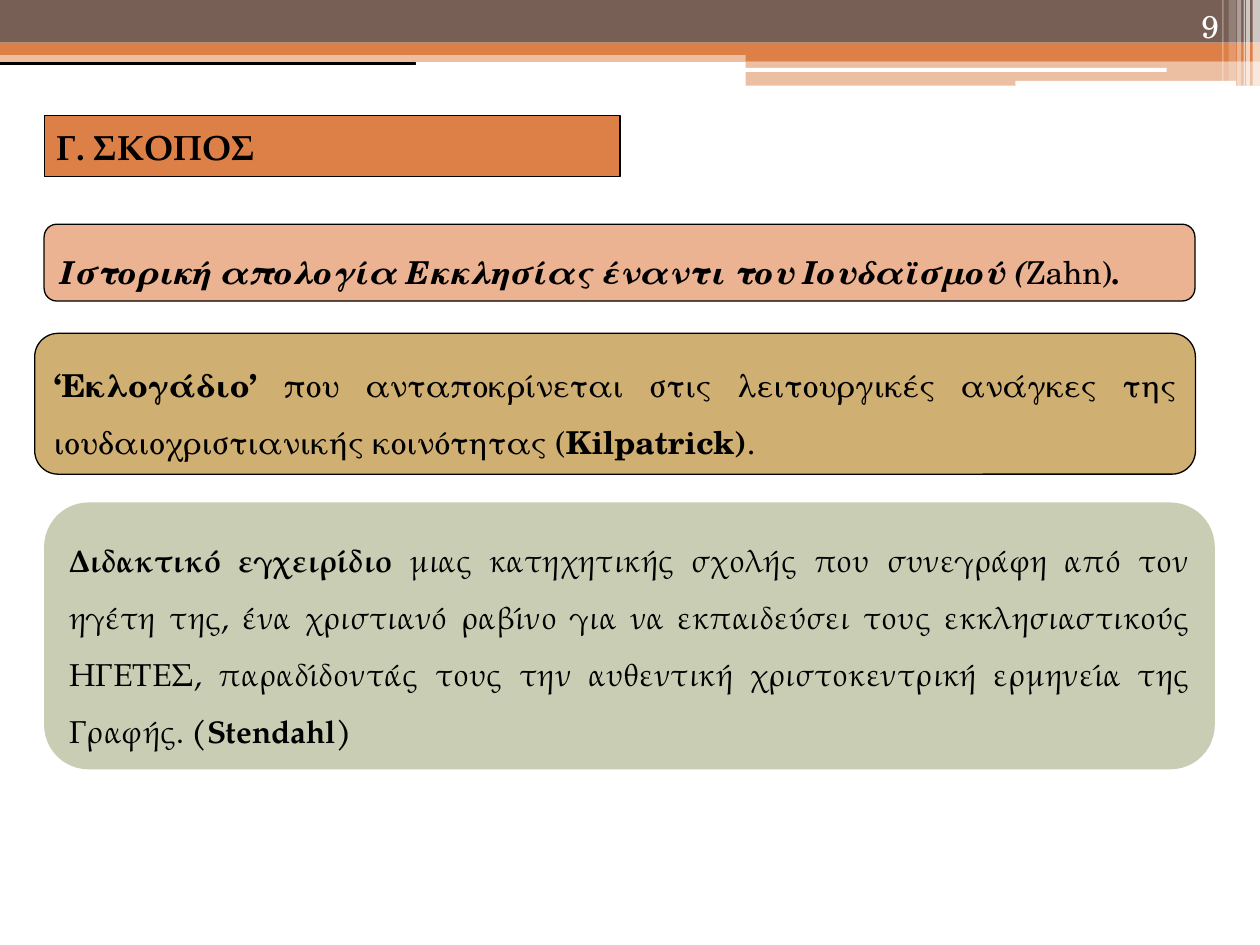
from dataclasses import dataclass
from pptx import Presentation
from pptx.dml.color import RGBColor
from pptx.enum.shapes import MSO_SHAPE
from pptx.enum.text import MSO_ANCHOR, MSO_AUTO_SIZE, PP_ALIGN
from pptx.oxml import parse_xml
from pptx.oxml.ns import nsdecls, qn
from pptx.util import Cm, Pt


@dataclass(frozen=True)
class Theme:
    brown: str = "775F55"
    orange: str = "DD8047"
    peach: str = "EBB391"
    sand: str = "D0AF72"
    sage: str = "C9CDB3"
    white: str = "FFFFFF"
    black: str = "000000"
    title_font: str = "TeX Gyre Pagella"
    text_font: str = "TeX Gyre Schola"
    title_size: int = 20
    text_size: int = 18
    outline: float = 0.75


def apply(target, values):
    for name, value in values.items():
        setattr(target, name, value)


class SlideBuilder:
    def __init__(self, slide, theme):
        self.slide = slide
        self.theme = theme

    def paint(self, shape, color, outlined=False):
        shape.fill.solid()
        shape.fill.fore_color.rgb = RGBColor.from_string(color)
        if outlined:
            shape.line.color.rgb = RGBColor.from_string(self.theme.black)
            shape.line.width = Pt(self.theme.outline)
        else:
            shape.line.fill.background()

    def set_text(self, shape, runs, font, size, color, alignment=PP_ALIGN.LEFT,
                 spacing=1.0, anchor=MSO_ANCHOR.MIDDLE):
        frame = shape.text_frame
        apply(frame, {"word_wrap": True, "auto_size": MSO_AUTO_SIZE.NONE,
                      "vertical_anchor": anchor})
        paragraph = frame.paragraphs[0]
        apply(paragraph, {"alignment": alignment, "line_spacing": spacing})
        for text, bold, italic in runs:
            run = paragraph.add_run()
            run.text = text
            apply(run.font, {"name": font, "size": Pt(size),
                             "bold": bold, "italic": italic})
            run.font.color.rgb = RGBColor.from_string(color)

    def bar(self, box, color, opacity=100, kind=MSO_SHAPE.RECTANGLE, outlined=False):
        shape = self.slide.shapes.add_shape(kind, *map(Cm, box))
        shape.shadow.inherit = False
        self.paint(shape, color, outlined)
        if opacity < 100:
            fill_color = shape._element.spPr.find(qn("a:solidFill"))[0]
            fill_color.append(parse_xml(
                f'<a:alpha {nsdecls("a")} val="{opacity * 1000}"/>'))
        return shape

    def title(self, box, text):
        title = self.slide.shapes.title
        apply(title, dict(zip(("left", "top", "width", "height"), map(Cm, box))))
        title._element.spPr.insert(1, parse_xml(
            f'<a:prstGeom {nsdecls("a")} prst="roundRect"><a:avLst/></a:prstGeom>'))
        self.paint(title, self.theme.orange, True)
        self.set_text(title, [(text, True, False)], self.theme.title_font,
                      self.theme.title_size, self.theme.black)

    def panel(self, box, color, runs, font, alignment, outlined=True):
        shape = self.bar(box, color, kind=MSO_SHAPE.ROUNDED_RECTANGLE, outlined=outlined)
        self.set_text(shape, runs, font, self.theme.text_size, self.theme.black,
                      alignment, 1.5)

    def slide_number(self, box, text):
        shape = self.slide.shapes.add_textbox(*map(Cm, box))
        self.set_text(shape, [(text, False, False)], self.theme.text_font,
                      self.theme.text_size, self.theme.white, PP_ALIGN.RIGHT,
                      anchor=MSO_ANCHOR.BOTTOM)


def add_banner(builder):
    theme = builder.theme
    for box, color, opacity in (
        ((0, 1.02, 25.4, 0.23), theme.orange, 50),
        ((0, 0, 25.4, 0.86), theme.brown, 100),
        ((0, 0.86, 25.4, 0.25), theme.orange, 100),
        ((15.03, 0.99, 10.37, 0.24), theme.orange, 100),
        ((15.03, 1.23, 10.37, 0.5), theme.orange, 50),
    ):
        builder.bar(box, color, opacity)
    for box in ((15.01, 1.37, 8.51, 0.08), (20.47, 1.63, 4.45, 0.1)):
        builder.bar(box, theme.white, kind=MSO_SHAPE.ROUNDED_RECTANGLE)
    for left, width, height, opacity in (
        (25.25, 0.15, 1.73, 65),
        (25.12, 0.08, 1.73, 65),
        (25.07, 0.03, 1.73, 60),
        (24.94, 0.08, 1.73, 40),
        (24.77, 0.15, 1.63, 20),
        (24.64, 0.03, 1.63, 30),
    ):
        builder.bar((left, 0, width, height), theme.white, opacity)
    builder.slide_number((22.71, 0, 2.11, 1.02), "9")
    builder.bar((0, 1.27, 8.38, 0.03), theme.black, outlined=True)


def add_purposes(builder):
    theme = builder.theme
    builder.title((0.89, 2.33, 11.61, 1.23), "Γ. ΣΚΟΠΟΣ")
    builder.panel((0.89, 10.13, 23.6, 5.38), theme.sage, [
        ("Διδακτικό εγχειρίδιο", True, False),
        (" μιας κατηχητικής σχολής που συνεγράφη από τον ηγέτη της, ένα χριστιανό "
         "ραβίνο για να εκπαιδεύσει τους εκκλησιαστικούς ΗΓΕΤΕΣ, παραδίδοντάς τους "
         "την αυθεντική χριστοκεντρική ερμηνεία της Γραφής.", False, False),
        (" (Stendahl)", True, False),
    ], theme.title_font, PP_ALIGN.JUSTIFY, outlined=False)
    builder.panel((0.89, 4.52, 23.2, 1.55), theme.peach, [
        ("Ιστορική απολογία Εκκλησίας έναντι του Ιουδαϊσμού (", True, True),
        ("Zahn)", False, False),
        (".", True, True),
    ], theme.text_font, PP_ALIGN.LEFT)
    builder.panel((0.7, 6.72, 23.4, 2.84), theme.sand, [
        ("‘Εκλογάδιο’ ", True, False),
        ("που ανταποκρίνεται στις λειτουργικές ανάγκες της "
         "ιουδαιοχριστιανικής κοινότητας (", False, False),
        ("Kilpatrick)", True, False),
        (".", False, False),
    ], theme.text_font, PP_ALIGN.JUSTIFY)


def main():
    presentation = Presentation()
    apply(presentation, {"slide_width": Cm(25.4), "slide_height": Cm(19.05)})
    slide = presentation.slides.add_slide(presentation.slide_layouts[5])
    builder = SlideBuilder(slide, Theme())
    add_banner(builder)
    add_purposes(builder)
    presentation.save("out.pptx")


if __name__ == "__main__":
    main()
